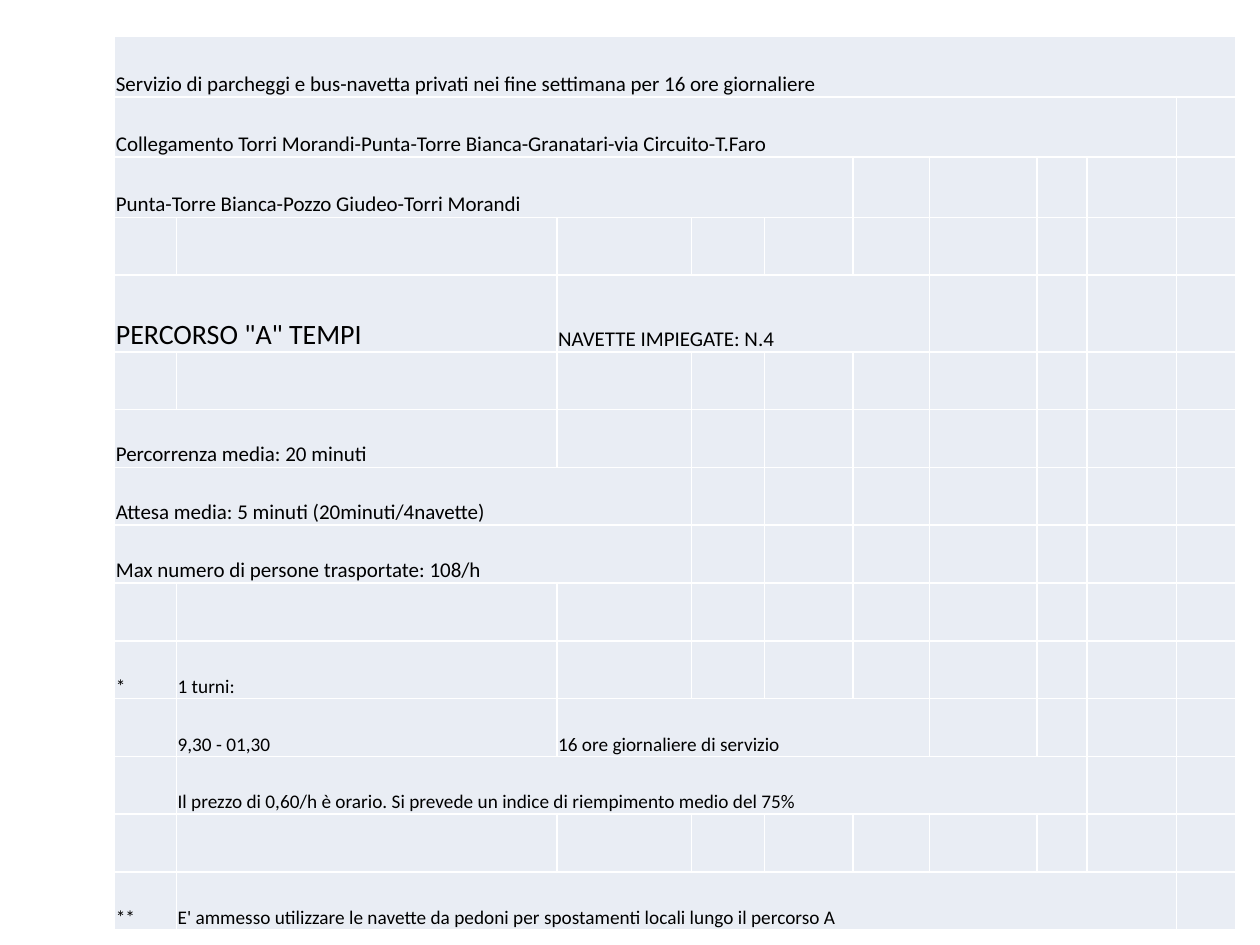
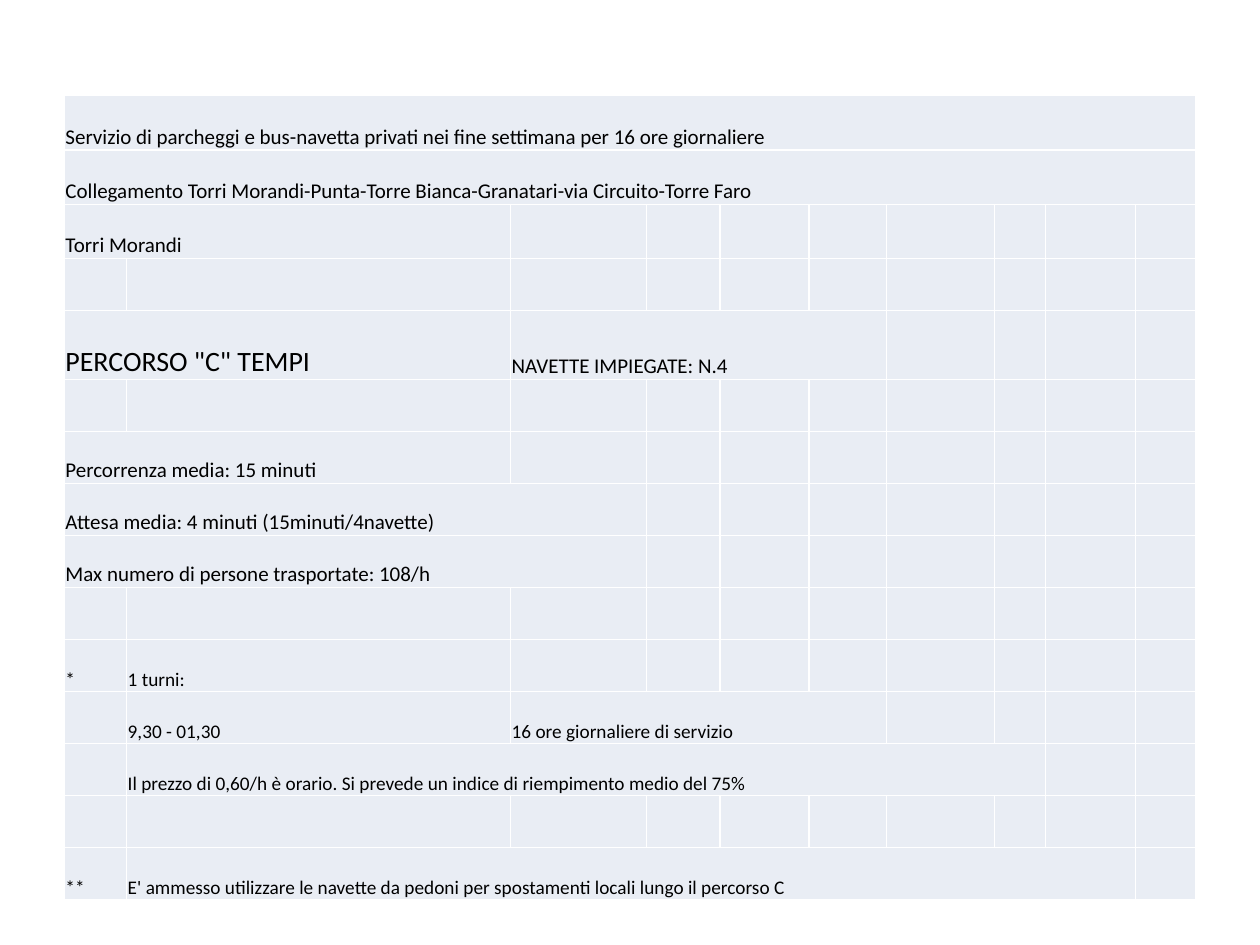
from dataclasses import dataclass

from lxml import etree
from pptx import Presentation
from pptx.dml.color import RGBColor
from pptx.enum.text import MSO_ANCHOR
from pptx.oxml.ns import qn
from pptx.util import Inches, Pt

BOTTOM = MSO_ANCHOR.BOTTOM
BLANK_LAYOUT = 6
BORDER_SIDES = ("a:lnL", "a:lnR", "a:lnT", "a:lnB")

# Relative sizes shared by both timetables, scaled to each table's box
COLUMN_WEIGHTS = [0.49, 3.02, 1.07, 0.58, 0.7, 0.61, 0.85, 0.4, 0.71, 0.47]
ROW_WEIGHTS = [0.48] * 3 + [0.46, 0.61] + [0.46] * 10


@dataclass(frozen=True)
class Theme:
    font: str = "Calibri"
    text: str = "000000"
    cell: str = "E9EDF4"
    border: str = "FFFFFF"
    border_width: float = 1
    heading: int = 16
    body: int = 12
    note: int = 11


THEME = Theme()
CELL_FORMAT = {
    "margin_left": Inches(0.01),
    "margin_right": Inches(0.01),
    "margin_top": Inches(0.01),
    "margin_bottom": 0,
    "vertical_anchor": BOTTOM,
}


def scaled(weights, total):
    return [Inches(total * weight / sum(weights)) for weight in weights]


class Deck:
    def __init__(self, theme):
        self.theme = theme
        self.presentation = Presentation()
        self.presentation.slide_width = Inches(10)
        self.presentation.slide_height = Inches(7.5)
        self.slide = None

    def add_slide(self):
        layout = self.presentation.slide_layouts[BLANK_LAYOUT]
        self.slide = self.presentation.slides.add_slide(layout)

    def add_borders(self, cell):
        properties = cell._tc.get_or_add_tcPr()
        for position, side in enumerate(BORDER_SIDES):
            line = etree.Element(qn(side), w=str(Pt(self.theme.border_width)))
            fill = etree.SubElement(line, qn("a:solidFill"))
            etree.SubElement(fill, qn("a:srgbClr"), val=self.theme.border)
            properties.insert(position, line)

    def style_cell(self, cell):
        for attribute, value in CELL_FORMAT.items():
            setattr(cell, attribute, value)
        cell.fill.solid()
        cell.fill.fore_color.rgb = RGBColor.from_string(self.theme.cell)
        self.add_borders(cell)

    def add_text(self, cell, text, size):
        run = cell.text_frame.paragraphs[0].add_run()
        run.text = text
        run.font.name = self.theme.font
        run.font.size = Pt(size)
        run.font.color.rgb = RGBColor.from_string(self.theme.text)

    def add_timetable(self, box, entries):
        """Draw the grid; each entry is row, column, columns spanned, text, size."""
        left, top, width, height = map(Inches, box)
        table = self.slide.shapes.add_table(
            len(ROW_WEIGHTS), len(COLUMN_WEIGHTS), left, top, width, height
        ).table
        table.first_row = table.horz_banding = False
        for column, column_width in zip(table.columns, scaled(COLUMN_WEIGHTS, width.inches)):
            column.width = column_width
        for row, row_height in zip(table.rows, scaled(ROW_WEIGHTS, height.inches)):
            row.height = row_height
        for cell in table.iter_cells():
            self.style_cell(cell)
        for row, column, span, text, size in entries:
            cell = table.cell(row, column)
            if span > 1:
                cell.merge(table.cell(row, column + span - 1))
            self.add_text(cell, text, size)


def route_entries(route, stops, travel, wait):
    """Stops are (columns spanned, text) pairs for the two rows under the title."""
    heading, body, note = THEME.heading, THEME.body, THEME.note
    stop_rows = [(row, 0, span, text, body) for row, (span, text) in enumerate(stops, 1)]
    return [
        (0, 0, 10, "Servizio di parcheggi e bus-navetta privati nei fine settimana "
                   "per 16 ore giornaliere", body),
        *stop_rows,
        (4, 0, 2, f'PERCORSO "{route}" TEMPI', heading),
        (4, 2, 4, "NAVETTE IMPIEGATE: N.4", body),
        (6, 0, 2, f"Percorrenza media: {travel} minuti", body),
        (7, 0, 3, f"Attesa media: {wait} minuti ({travel}minuti/4navette)", body),
        (8, 0, 3, "Max numero di persone trasportate: 108/h", body),
        (10, 0, 1, "*", note),
        (10, 1, 1, "1 turni:", note),
        (11, 1, 1, "9,30 - 01,30", note),
        (11, 2, 4, "16 ore giornaliere di servizio", note),
        (12, 1, 7, "Il prezzo di 0,60/h è orario. Si prevede un indice di "
                   "riempimento medio del 75%", note),
        (14, 0, 1, "**", note),
        (14, 1, 8, "E' ammesso utilizzare le navette da pedoni per spostamenti "
                   f"locali lungo il percorso {route}", note),
    ]


def main():
    connection = "Collegamento Torri Morandi-Punta-Torre Bianca-Granatari-via Circuito-"
    stops_a = [(9, connection + "T.Faro"),
               (5, "Punta-Torre Bianca-Pozzo Giudeo-Torri Morandi")]
    stops_c = [(10, connection + "Torre Faro"), (2, "Torri Morandi")]
    timetables = [
        ((0.91, 0.29, 8.9, 7.09), route_entries("A", stops_a, travel=20, wait=5)),
        ((0.51, 0.76, 8.98, 6.38), route_entries("C", stops_c, travel=15, wait=4)),
    ]
    deck = Deck(THEME)
    for box, entries in timetables:
        deck.add_slide()
        deck.add_timetable(box, entries)
    deck.presentation.save("out.pptx")


if __name__ == "__main__":
    main()
